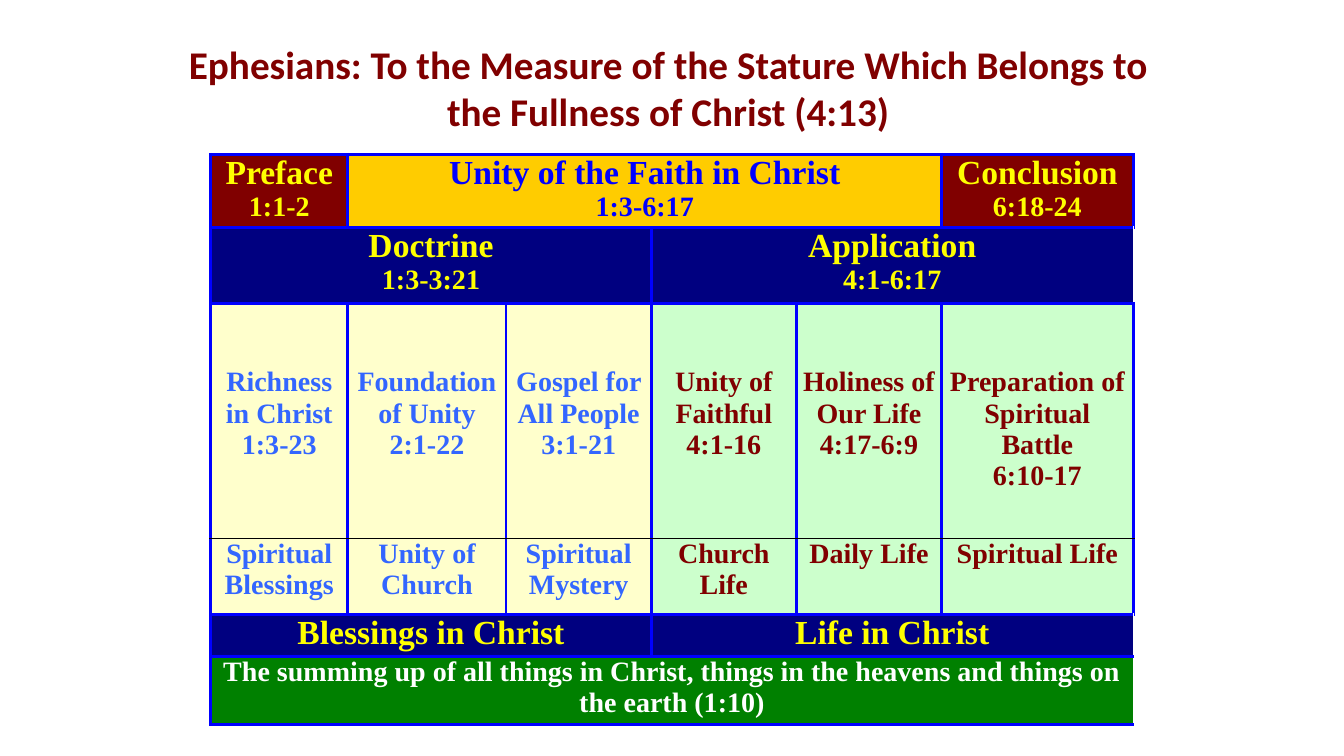
from lxml import etree
from pptx import Presentation
from pptx.dml.color import RGBColor
from pptx.enum.text import PP_ALIGN
from pptx.oxml.ns import qn
from pptx.util import Inches, Pt

CENTER = PP_ALIGN.CENTER
HUES = {
    "maroon": "800000", "yellow": "FFFF00", "blue": "0000FF", "gold": "FFCC00",
    "navy": "000080", "sky": "3366FF", "cream": "FFFFCC", "mint": "CCFFCC",
    "green": "008000", "white": "FFFFFF", "black": "000000",
}
TITLE = [
    "Ephesians: To the Measure of the Stature Which Belongs to ",
    "the Fullness of Christ (4:13) ",
]
HEAD, BODY = 24, 20
WIDTHS = [1.36, 1.57, 1.44, 1.44, 1.44, 1.9]
HEIGHTS = [0.73, 0.75, 2.33, 0.76, 0.41, 0.68]
TOPIC = 2
DROP = 0.63
LEFT = ("cream", "sky")
RIGHT = ("mint", "maroon")
EDGE = ("maroon", "yellow")
BAND = ("navy", "yellow")

ROWS = [
    [(1, EDGE, [("Preface", HEAD), ("1:1-2", BODY)]),
     (4, ("gold", "blue"), [("Unity of the Faith in Christ", HEAD), ("1:3-6:17", BODY)]),
     (1, EDGE, [("Conclusion", HEAD), ("6:18-24", BODY)])],
    [(3, BAND, [("Doctrine", HEAD), ("1:3-3:21", BODY)]),
     (3, BAND, [("Application", HEAD), ("4:1-6:17", BODY)])],
    [(1, LEFT, [("Richness in Christ", BODY), ("1:3-23", BODY)]),
     (1, LEFT, [("Foundation of Unity", BODY), ("2:1-22", BODY)]),
     (1, LEFT, [("Gospel for All People", BODY), ("3:1-21", BODY)]),
     (1, RIGHT, [("Unity of Faithful", BODY), ("4:1-16", BODY)]),
     (1, RIGHT, [("Holiness of Our Life", BODY), ("4:17-6:9", BODY)]),
     (1, RIGHT, [("Preparation of Spiritual Battle", BODY), ("6:10-17", BODY)])],
    [(1, LEFT, [("Spiritual Blessings", BODY)]),
     (1, LEFT, [("Unity of Church", BODY)]),
     (1, LEFT, [("Spiritual Mystery", BODY)]),
     (1, RIGHT, [("Church Life", BODY)]),
     (1, RIGHT, [("Daily Life", BODY)]),
     (1, RIGHT, [("Spiritual Life", BODY)])],
    [(3, BAND, [("Blessings in Christ", HEAD)]),
     (3, BAND, [("Life in Christ", HEAD)])],
    [(6, ("green", "white"),
      [("The summing up of all things in Christ, things in the heavens "
        "and things on the earth (1:10)", BODY)])],
]


def write(frame, lines, face, hue):
    frame.word_wrap = True
    for i, (text, size) in enumerate(lines):
        para = frame.paragraphs[0] if i == 0 else frame.add_paragraph()
        para.alignment = CENTER
        run = para.add_run()
        run.text = text
        font = run.font
        font.name, font.size, font.bold = face, Pt(size), True
        font.color.rgb = RGBColor.from_string(HUES[hue])


def border(cell, side, hue, width):
    line = etree.SubElement(cell._tc.get_or_add_tcPr(), qn("a:ln" + side), w=str(Pt(width)))
    fill = etree.SubElement(line, qn("a:solidFill"))
    etree.SubElement(fill, qn("a:srgbClr"), val=HUES[hue])


def frame_cell(cell, row, first, last):
    sides = ("L" if first else "") + ("R" if last else "") + "TB"
    for side in sides:
        thin = (row, side) in ((TOPIC, "B"), (TOPIC + 1, "T"))
        border(cell, side, *(("black", 1) if thin else ("blue", 2.25)))


def add_grid(slide):
    grid = slide.shapes.add_table(
        len(HEIGHTS), len(WIDTHS), Inches(2.09), Inches(1.53),
        Inches(sum(WIDTHS)), Inches(sum(HEIGHTS))).table
    grid.first_row = grid.horz_banding = False
    for col, width in zip(grid.columns, WIDTHS):
        col.width = Inches(width)
    for row, height in zip(grid.rows, HEIGHTS):
        row.height = Inches(height)
    for r, row in enumerate(ROWS):
        start = 0
        for span, (back, hue), lines in row:
            end = start + span - 1
            for c in range(start, end + 1):
                cell = grid.cell(r, c)
                frame_cell(cell, r, c == start, c == end)
                cell.fill.solid()
                cell.fill.fore_color.rgb = RGBColor.from_string(HUES[back])
                cell.margin_left = cell.margin_right = Inches(0.05)
                cell.margin_top = Inches(DROP if r == TOPIC else 0)
                cell.margin_bottom = 0
            cell = grid.cell(r, start)
            if span > 1:
                cell.merge(grid.cell(r, end))
            write(cell.text_frame, lines, "Times New Roman", hue)
            start += span


def main():
    deck = Presentation()
    deck.slide_width, deck.slide_height = Inches(13.33), Inches(7.5)
    slide = deck.slides.add_slide(deck.slide_layouts[6])
    add_grid(slide)
    box = slide.shapes.add_textbox(Inches(0.42), Inches(0.35), Inches(12.5), Inches(1.04))
    write(box.text_frame, [(line, 28) for line in TITLE], "Calibri", "maroon")
    deck.save("out.pptx")


if __name__ == "__main__":
    main()
